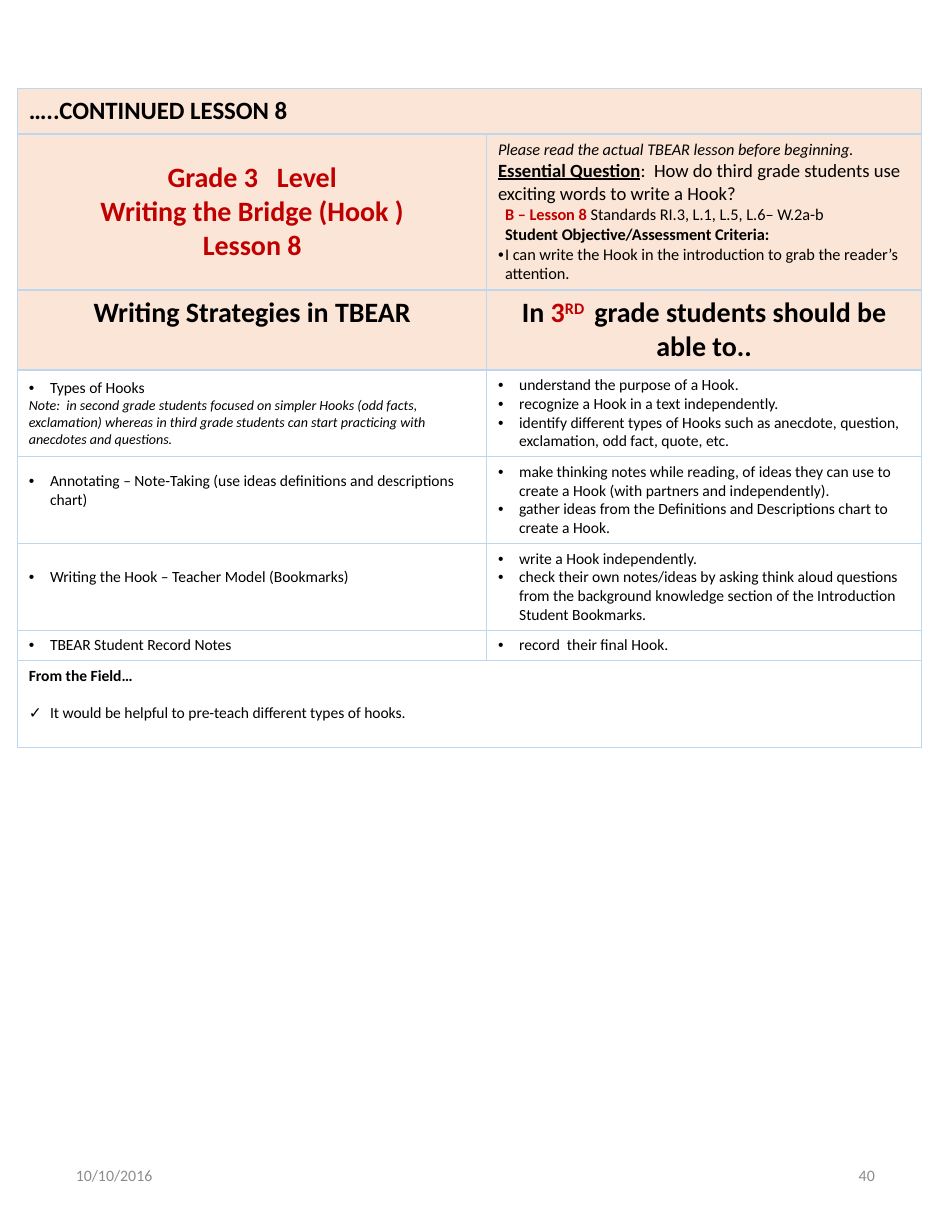
from dataclasses import dataclass, field

from lxml.etree import SubElement
from pptx import Presentation
from pptx.dml.color import RGBColor
from pptx.enum.text import MSO_ANCHOR as Anchor, PP_ALIGN as Align
from pptx.oxml.ns import qn
from pptx.util import Cm, Pt

BLACK = RGBColor(0x00, 0x00, 0x00)
RED = RGBColor(0xC0, 0x00, 0x00)
GRAY = RGBColor(0x8C, 0x8C, 0x8C)
PEACH = RGBColor(0xFB, 0xE5, 0xD6)
WHITE = RGBColor(0xFF, 0xFF, 0xFF)
BORDER = RGBColor(0xBD, 0xD7, 0xEE)


@dataclass
class Span:
    """A stretch of text with one format."""
    text: str
    size: float = 10
    color: RGBColor = BLACK
    bold: bool = False
    italic: bool = False
    underline: bool = False
    raised: bool = False


@dataclass
class Para:
    """A paragraph of spans, with an optional bullet; indents in cm."""
    spans: list
    align: Align = Align.LEFT
    bullet: str = ""
    left: float = 0
    first: float = 0
    before: float = 0


@dataclass
class Cell:
    """The content and look of one table cell."""
    paras: list = field(default_factory=list)
    fill: RGBColor = WHITE
    anchor: Anchor = Anchor.TOP
    bottom: float = 0.13


def line(text, **style):
    """Return a plain left-aligned paragraph."""
    return Para([Span(text, **style)])


def heading(*spans):
    """Return a centred paragraph."""
    return Para(list(spans), align=Align.CENTER)


def item(text, bullet="•", before=0):
    """Return a bulleted paragraph with a hanging indent."""
    return Para([Span(text)], bullet=bullet, left=0.48, first=-0.48, before=before)


def items(*texts):
    """Return a top-anchored cell of bullets."""
    return Cell([item(text) for text in texts])


def strategy(text, bottom=0.13):
    """Return a vertically centred cell with one bullet."""
    return Cell([item(text)], anchor=Anchor.MIDDLE, bottom=bottom)


class SlideBuilder:
    """Holds the style and the current slide."""

    def __init__(self, slide, font="Calibri"):
        self.slide = slide
        self.font = font

    def fill_text(self, frame, paras):
        """Fill a text frame with paragraphs."""
        frame.word_wrap = True
        for index, source in enumerate(paras):
            para = frame.paragraphs[0] if index == 0 else frame.add_paragraph()
            para.alignment = source.align
            para.space_before = Pt(source.before)
            props = para._p.get_or_add_pPr()
            props.set("marL", str(Cm(source.left)))
            props.set("indent", str(Cm(source.first)))
            if source.bullet:
                SubElement(props, qn("a:buFont"), typeface="Arial")
                SubElement(props, qn("a:buChar"), char=source.bullet)
            for span in source.spans:
                self.add_span(para, span)

    def add_span(self, para, span):
        """Add one formatted run."""
        run = para.add_run()
        run.text = span.text
        font = run.font
        font.name, font.size = self.font, Pt(span.size)
        font.color.rgb = span.color
        font.bold, font.italic = span.bold, span.italic
        font.underline = span.underline
        if span.raised:
            run._r.get_or_add_rPr().set("baseline", "30000")

    def text(self, left, top, width, height, para):
        """Add a vertically centred text box."""
        box = self.slide.shapes.add_textbox(Cm(left), Cm(top), Cm(width), Cm(height))
        box.text_frame.vertical_anchor = Anchor.MIDDLE
        self.fill_text(box.text_frame, [para])

    def outline(self, cell):
        """Draw the four cell borders."""
        props = cell._tc.get_or_add_tcPr()
        for index, side in enumerate(("a:lnL", "a:lnR", "a:lnT", "a:lnB")):
            edge = props.makeelement(qn(side), {"w": str(Pt(1))})
            fill = SubElement(edge, qn("a:solidFill"))
            SubElement(fill, qn("a:srgbClr"), val=str(BORDER))
            props.insert(index, edge)

    def table(self, left, top, widths, heights, rows):
        """Add a table; a row with a single cell spans all columns."""
        frame = self.slide.shapes.add_table(
            len(rows), len(widths), Cm(left), Cm(top), Cm(sum(widths)), Cm(sum(heights)))
        table = frame.table
        for column, width in zip(table.columns, widths):
            column.width = Cm(width)
        for row_index, (height, sources) in enumerate(zip(heights, rows)):
            table.rows[row_index].height = Cm(height)
            if len(sources) == 1:
                table.cell(row_index, 0).merge(table.cell(row_index, len(widths) - 1))
            for column_index in range(len(widths)):
                cell = table.cell(row_index, column_index)
                source = sources[min(column_index, len(sources) - 1)]
                cell.fill.solid()
                cell.fill.fore_color.rgb = source.fill
                self.outline(cell)
                if column_index < len(sources):
                    cell.vertical_anchor = source.anchor
                    cell.margin_bottom = Cm(source.bottom)
                    self.fill_text(cell.text_frame, source.paras)


title = Cell([line("…..CONTINUED LESSON 8", size=16, bold=True)], PEACH, Anchor.MIDDLE)
lesson = Cell([heading(Span(text, 18, RED, bold=True)) for text in (
    "Grade 3   Level", "Writing the Bridge (Hook )", "Lesson 8")], PEACH, Anchor.MIDDLE)
question = Cell([
    line("Please read the actual TBEAR lesson before beginning.", size=10.5, italic=True),
    Para([Span("Essential Question", 12, bold=True, underline=True),
          Span(":  How do third grade students use exciting words to write a Hook?", 12)]),
    Para([Span("B – Lesson 8 ", 10.5, RED, bold=True),
          Span("Standards RI.3, L.1, L.5, L.6– W.2a-b", 10.5)], first=0.16),
    Para([Span("Student Objective/Assessment Criteria:", 10.5, bold=True)], first=0.16),
    Para([Span("I can write the Hook in the introduction to grab the reader’s attention.", 10.5)],
         bullet="•", left=0.16, first=-0.16),
], PEACH, Anchor.MIDDLE)
strategies = Cell([heading(Span("Writing Strategies in TBEAR", 18, bold=True))], PEACH)
abilities = Cell([heading(
    Span("In ", 18, bold=True),
    Span("3", 18, RED, bold=True),
    Span("RD ", 18, RED, bold=True, raised=True),
    Span(" grade students should be able to..", 18, bold=True))], PEACH)
hooks = Cell([
    item("Types of Hooks"),
    line("Note:  in second grade students focused on simpler Hooks (odd facts, exclamation) "
         "whereas in third grade students can start practicing with anecdotes and questions.",
         size=9, italic=True)], anchor=Anchor.MIDDLE)
field_notes = Cell([
    line("From the Field… ", bold=True),
    item("It would be helpful to pre-teach different types of hooks.", "✓", before=12)])

lesson_rows = [
    [title],
    [lesson, question],
    [strategies, abilities],
    [hooks, items(
        "understand the purpose of a Hook.",
        "recognize a Hook in a text independently.",
        "identify different types of Hooks such as anecdote, question, exclamation, "
        "odd fact, quote, etc.")],
    [strategy("Annotating – Note-Taking (use ideas definitions and descriptions chart)", 0.58),
     items("make thinking notes while reading, of ideas they can use to create a Hook "
           "(with partners and independently).",
           "gather ideas from the Definitions and Descriptions chart to create a Hook.")],
    [strategy("Writing the Hook – Teacher Model (Bookmarks)", 0.58),
     items("write a Hook independently.",
           "check their own notes/ideas by asking think aloud questions from the background "
           "knowledge section of the Introduction Student Bookmarks.")],
    [strategy("TBEAR Student Record Notes"), items("record  their final Hook.")],
    [field_notes],
]

deck = Presentation()
deck.slide_width, deck.slide_height = Cm(21.59), Cm(27.94)
page = SlideBuilder(deck.slides.add_slide(deck.slide_layouts[6]))
page.table(0.4, 2, [10.64, 9.86], [1.04, 3.54, 1.81, 1.97, 1.96, 1.96, 0.68, 1.97], lesson_rows)
page.text(15.24, 25.91, 4.85, 1.5, Para([Span("40", 10.2, GRAY)], align=Align.RIGHT))
page.text(1.47, 25.91, 4.85, 1.5, line("10/10/2016", size=10.2, color=GRAY))
deck.save("out.pptx")
